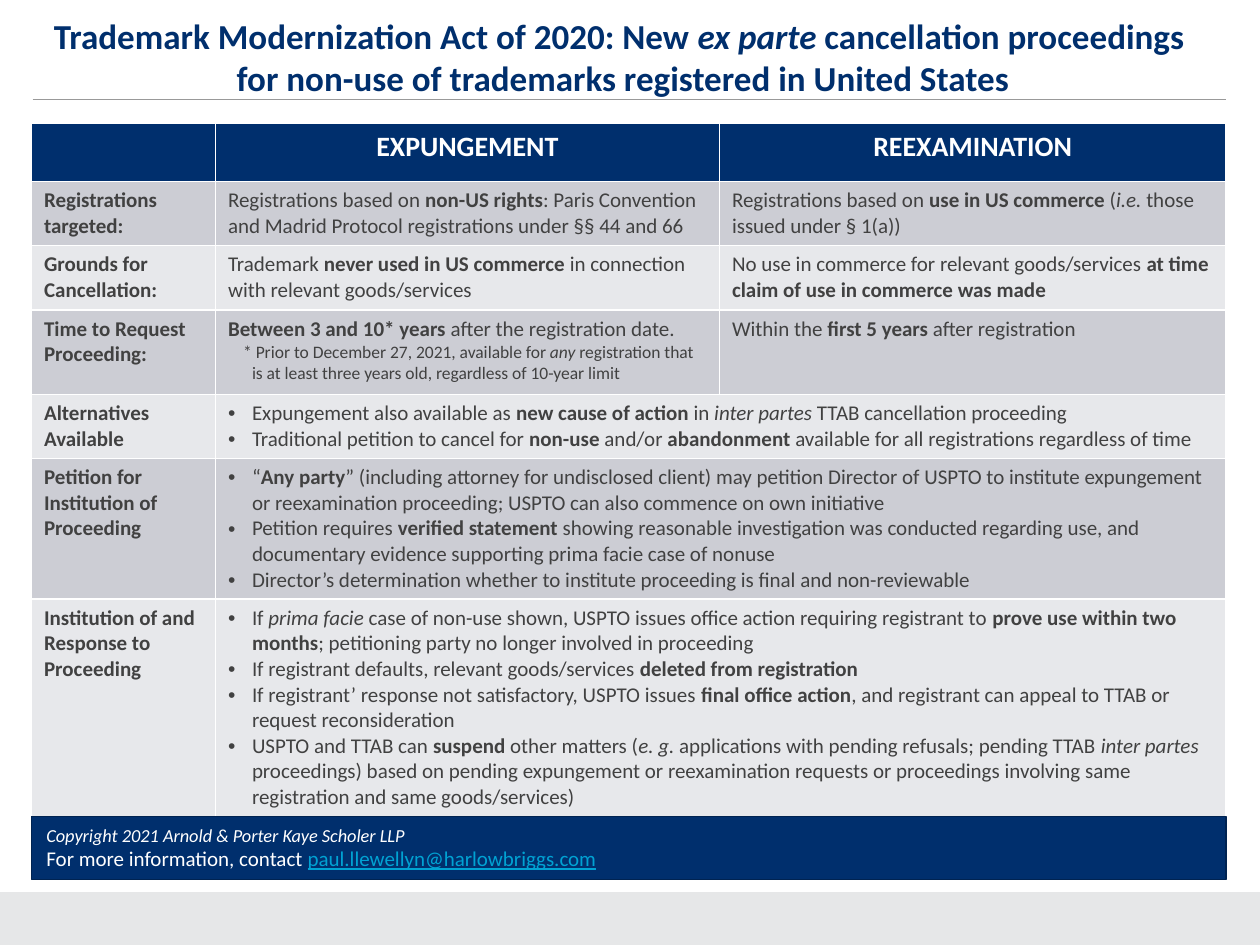
from lxml.etree import SubElement
from pptx import Presentation
from pptx.dml.color import RGBColor
from pptx.enum.shapes import MSO_CONNECTOR as LINE, MSO_SHAPE as SHAPE
from pptx.enum.text import MSO_ANCHOR as ANCHOR, PP_ALIGN as ALIGN
from pptx.oxml.ns import qn
from pptx.util import Inches, Pt

NAVY = RGBColor(0x00, 0x2F, 0x6D)
EDGE = RGBColor(0x00, 0x23, 0x51)
WHITE = RGBColor(0xFF, 0xFF, 0xFF)
TEXT = RGBColor(0x41, 0x41, 0x41)
DARK = RGBColor(0xCC, 0xCD, 0xD4)
LIGHT = RGBColor(0xE7, 0xE8, 0xEB)
BAND = RGBColor(0xE6, 0xE7, 0xE8)
RULE = RGBColor(0x99, 0x99, 0x99)
LINK = RGBColor(0x00, 0xA2, 0xD3)
FACE = "Calibri"

# In all wording, **x** is bold and _x_ is italic.
TITLE = ("Trademark Modernization Act of 2020: New _ex parte_ cancellation proceedings ",
         "for non-use of trademarks registered in United States")
HEADS = ("", "EXPUNGEMENT", "REEXAMINATION")
NOTE = ("* Prior to December 27, 2021, available for _any _registration that "
        "is at least three years old, regardless of 10-year limit")
# Label, then one text per column, or a list of bullets across both columns.
ROWS = [
    ("Registrations targeted:",
     "Registrations based on **non-US rights**: Paris Convention and Madrid Protocol "
     "registrations under §§ 44 and 66",
     "Registrations based on **use in US commerce **(_i.e. _those issued under § 1(a))"),
    ("Grounds for Cancellation:",
     "Trademark **never used in US commerce **in connection with relevant goods/services",
     "No use in commerce for relevant goods/services "
     "**at time claim of use in commerce was made**"),
    ("Time to Request Proceeding:",
     "**Between 3 and 10* years **after the registration date.",
     "Within the **first 5 years **after registration"),
    ("Alternatives Available", [
        "Expungement also available as **new cause of action **in _inter partes _"
        "TTAB cancellation proceeding",
        "Traditional petition to cancel for **non-use **and/or **abandonment **"
        "available for all registrations regardless of time"]),
    ("Petition for Institution of Proceeding", [
        "“**Any party**” (including attorney for undisclosed client) may petition Director "
        "of USPTO to institute expungement or reexamination proceeding; "
        "USPTO can also commence on own initiative",
        "Petition requires **verified statement **showing reasonable investigation was "
        "conducted regarding use, and documentary evidence supporting prima facie case of nonuse",
        "Director’s determination whether to institute proceeding is final and non-reviewable"]),
    ("Institution of and Response to Proceeding", [
        "If _prima facie _case of non-use shown, USPTO issues office action requiring "
        "registrant to **prove use within two months**; "
        "petitioning party no longer involved in proceeding",
        "If registrant defaults, relevant goods/services **deleted from registration**",
        "If registrant’ response not satisfactory, USPTO issues **final office action**, "
        "and registrant can appeal to TTAB or request reconsideration",
        "USPTO and TTAB can **suspend **other matters (_e. g._ applications with pending "
        "refusals; pending TTAB _inter partes _proceedings) based on pending expungement or "
        "reexamination requests or proceedings involving same registration and same "
        "goods/services)"]),
]
COLS = (1.46, 4, 4.02)
HIGH = (0.46, 0.51, 0.51, 0.67, 0.51, 1.11, 1.72)
LEFT, WIDE, TOP = 0.25, sum(COLS), 0.98
FOOT = 6.48


def style(par, size, color, align=ALIGN.LEFT):
    par.alignment = align
    par.font.name, par.font.size = FACE, Pt(size)
    par.font.color.rgb = color


def write(par, text, bold=False):
    """Add runs for marked text; bold makes every run bold."""
    for i, part in enumerate(text.split("**")):
        for j, piece in enumerate(part.split("_")):
            if piece:
                run = par.add_run()
                run.text = piece
                run.font.bold = bold or i % 2 == 1
                run.font.italic = j % 2 == 1


def indent(par, left, first, mark=None):
    props = par._p.get_or_add_pPr()
    props.set("marL", str(Inches(left)))
    props.set("indent", str(Inches(first)))
    if mark:
        SubElement(props, qn("a:buFont"), typeface="Arial")
        SubElement(props, qn("a:buChar"), char=mark)


def tint(cell, color):
    cell.fill.solid()
    cell.fill.fore_color.rgb = color


def block(slide, left, top, wide, high, color, edge=None):
    box = slide.shapes.add_shape(SHAPE.RECTANGLE, *map(Inches, (left, top, wide, high)))
    box.shadow.inherit = False
    box.fill.solid()
    box.fill.fore_color.rgb = color
    if edge:
        box.line.color.rgb, box.line.width = edge, Pt(1)
    else:
        box.line.fill.background()


def add_title(slide):
    box = slide.shapes.title
    box.left, box.top, box.width, box.height = map(Inches, (0.17, 0.12, 9.55, 0.66))
    box.text_frame.vertical_anchor = ANCHOR.MIDDLE
    par = box.text_frame.paragraphs[0]
    style(par, 20, NAVY, ALIGN.CENTER)
    write(par, TITLE[0], True)
    par.add_line_break()
    write(par, TITLE[1], True)
    rule = slide.shapes.add_connector(LINE.STRAIGHT, *map(Inches, (0.26, 0.79, 9.73, 0.79)))
    rule.line.color.rgb, rule.line.width = RULE, Pt(1)
    SubElement(rule._element.spPr, qn("a:effectLst"))


def add_grid(slide):
    grid = slide.shapes.add_table(len(HIGH), len(COLS), *map(
        Inches, (LEFT, TOP, WIDE, sum(HIGH)))).table
    for col, wide in zip(grid.columns, COLS):
        col.width = Inches(wide)
    for row, high in zip(grid.rows, HIGH):
        row.height = Inches(high)
    for c, head in enumerate(HEADS):
        cell = grid.cell(0, c)
        tint(cell, NAVY)
        style(cell.text_frame.paragraphs[0], 16, WHITE, ALIGN.CENTER)
        write(cell.text_frame.paragraphs[0], head, True)
    for r, row in enumerate(ROWS, 1):
        for c in range(len(COLS)):
            tint(grid.cell(r, c), DARK if r % 2 else LIGHT)
        for c, item in enumerate(row):
            cell = grid.cell(r, c)
            frame = cell.text_frame
            bullets = isinstance(item, list)
            if bullets:
                cell.merge(grid.cell(r, c + 1))
            for n, text in enumerate(item if bullets else [item]):
                par = frame.add_paragraph() if n else frame.paragraphs[0]
                if bullets:
                    indent(par, 0.19, -0.19, "•")
                style(par, 12, TEXT)
                write(par, text, c == 0)
    note = grid.cell(3, 1).text_frame.add_paragraph()
    indent(note, 0.19, -0.07)
    note.space_after = Pt(6)
    style(note, 10, TEXT)
    write(note, NOTE)


def add_foot(slide):
    block(slide, LEFT, FOOT, WIDE, 0.5, NAVY, EDGE)
    frame = slide.shapes.add_textbox(*map(Inches, (0.27, 6.49, 4.6, 0.48))).text_frame
    frame.word_wrap = True
    credit, contact = frame.paragraphs[0], frame.add_paragraph()
    style(credit, 10.5, WHITE)
    write(credit, "_Copyright 2021 Arnold & Porter Kaye Scholer LLP_")
    style(contact, 12, WHITE)
    write(contact, "For more information, contact ")
    mail = contact.add_run()
    mail.text = "paul.llewellyn@harlowbriggs.com"
    mail.font.color.rgb, mail.font.underline = LINK, True


def main():
    deck = Presentation()
    deck.slide_width, deck.slide_height = Inches(10), Inches(7.5)
    slide = deck.slides.add_slide(deck.slide_layouts[5])
    block(slide, 0, 7.08, 10, 0.42, BAND)
    add_title(slide)
    add_grid(slide)
    add_foot(slide)
    deck.save("out.pptx")


if __name__ == "__main__":
    main()
